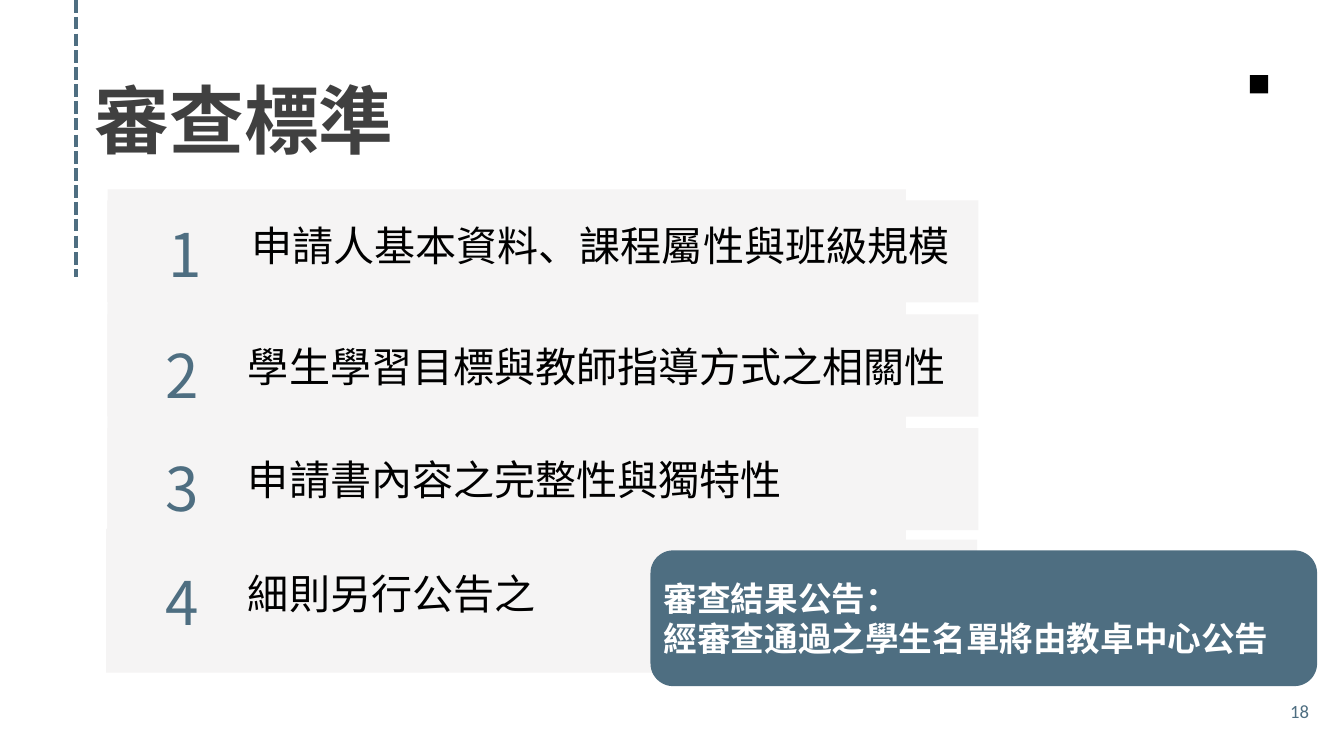
from dataclasses import dataclass

from lxml import etree
from pptx import Presentation
from pptx.dml.color import RGBColor
from pptx.enum.dml import MSO_LINE
from pptx.enum.shapes import MSO_CONNECTOR, MSO_SHAPE
from pptx.enum.text import MSO_ANCHOR, MSO_AUTO_SIZE, PP_ALIGN
from pptx.oxml.ns import qn
from pptx.util import Inches, Pt

RECTANGLE, ROUNDED = MSO_SHAPE.RECTANGLE, MSO_SHAPE.ROUNDED_RECTANGLE
STRAIGHT = MSO_CONNECTOR.STRAIGHT
SQUARE_DASH = MSO_LINE.SQUARE_DOT
MIDDLE = MSO_ANCHOR.MIDDLE
LEFT, RIGHT = PP_ALIGN.LEFT, PP_ALIGN.RIGHT
GROW = MSO_AUTO_SIZE.SHAPE_TO_FIT_TEXT

SLIDE_WIDTH, SLIDE_HEIGHT = 20, 11.25
CJK_FONT, LATIN_FONT = "Noto Sans CJK SC", "Calibri"
TEAL, PANEL_GREY, TITLE_GREY = "4E6E81", "F5F4F4", "404040"
BLACK, WHITE = "000000", "FFFFFF"

ROW_PITCH = 1.69
PANEL_LEFT, PANEL_TOP = 1.6, 2.98
NUMBER_LEFT, NUMBER_TOP = 2.51, 3.05
WORDING_LEFT, WORDING_TOP = 3.74, 3.28


@dataclass(frozen=True)
class Box:
    left: float
    top: float
    width: float
    height: float

    def emu(self) -> tuple:
        return tuple(Inches(v) for v in (self.left, self.top, self.width, self.height))


@dataclass(frozen=True)
class Style:
    size: float
    color: str
    font: str = CJK_FONT
    bold: bool = False
    align: PP_ALIGN = LEFT
    line_points: float = 0


@dataclass(frozen=True)
class Criterion:
    """A numbered row; the shifts are its offsets from the regular grid."""
    wording: str
    panel_dx: float = 0
    panel_dy: float = 0
    number_dx: float = -0.04
    wording_dx: float = -0.05
    text_dy: float = 0.11


CRITERIA = (
    Criterion("申請人基本資料、課程屬性與班級規模", number_dx=0, wording_dx=0, text_dy=0),
    Criterion("學生學習目標與教師指導方式之相關性", panel_dy=0.01),
    Criterion("申請書內容之完整性與獨特性", panel_dy=0.01),
    Criterion("細則另行公告之", panel_dx=-0.02, panel_dy=-0.02),
)
TITLE = Style(80, TITLE_GREY, bold=True)
NUMBER = Style(64.5, TEAL, line_points=90.3)
WORDING = Style(44, BLACK)
NOTICE = Style(36, WHITE, bold=True)
PAGE_NUMBER = Style(20, TEAL, font=LATIN_FONT, align=RIGHT)


def rgb(color: str) -> RGBColor:
    return RGBColor.from_string(color)


def write(frame, text: str, style: Style) -> None:
    frame.word_wrap = True
    frame.text = text
    for paragraph in frame.paragraphs:
        paragraph.alignment = style.align
        if style.line_points:
            paragraph.line_spacing = Pt(style.line_points)
        for run in paragraph.runs:
            run.font.size = Pt(style.size)
            run.font.bold = style.bold
            run.font.color.rgb = rgb(style.color)
            run.font.name = style.font
            east_asian = etree.SubElement(run.font._element, qn("a:ea"))
            east_asian.set("typeface", style.font)


def add_block(slide, box: Box, color: str, kind: MSO_SHAPE = RECTANGLE):
    block = slide.shapes.add_shape(kind, *box.emu())
    block.shadow.inherit = False
    block.fill.solid()
    block.fill.fore_color.rgb = rgb(color)
    block.line.fill.background()
    return block


def add_label(slide, box: Box, text: str, style: Style) -> None:
    """Add a text box without margins that grows with its text."""
    frame = slide.shapes.add_textbox(*box.emu()).text_frame
    frame.margin_left = frame.margin_top = frame.margin_right = frame.margin_bottom = 0
    write(frame, text, style)
    frame.auto_size = GROW


def add_dashed_rule(slide, x: float, bottom: float) -> None:
    rule = slide.shapes.add_connector(STRAIGHT, Inches(x), 0, Inches(x), Inches(bottom))
    rule.line.color.rgb = rgb(TEAL)
    rule.line.width = Pt(4.5)
    rule.line.dash_style = SQUARE_DASH
    etree.SubElement(rule._element.spPr, qn("a:effectLst"))


def add_panel(slide, row: int, criterion: Criterion) -> None:
    """Draw the wide band and the taller block that overlaps it."""
    left = PANEL_LEFT + criterion.panel_dx
    top = PANEL_TOP + row * ROW_PITCH + criterion.panel_dy
    add_block(slide, Box(left, top, 12.96, 1.52), PANEL_GREY)
    add_block(slide, Box(left, top - 0.16, 11.88, 2.14), PANEL_GREY)


def add_criterion_text(slide, row: int, criterion: Criterion) -> None:
    shift = row * ROW_PITCH + criterion.text_dy
    number_box = Box(NUMBER_LEFT + criterion.number_dx, NUMBER_TOP + shift, 0.49, 1.15)
    wording_box = Box(WORDING_LEFT + criterion.wording_dx, WORDING_TOP + shift, 10.65, 0.74)
    add_label(slide, number_box, str(row + 1), NUMBER)
    add_label(slide, wording_box, criterion.wording, WORDING)


def main() -> None:
    deck = Presentation()
    deck.slide_width, deck.slide_height = Inches(SLIDE_WIDTH), Inches(SLIDE_HEIGHT)
    slide = deck.slides.add_slide(deck.slide_layouts[6])

    add_dashed_rule(slide, 1.13, 4.12)
    add_block(slide, Box(18.6, 1.12, 0.27, 0.27), BLACK)
    add_label(slide, Box(1.41, 1.1, 12.75, 1.35), "審查標準", TITLE)

    for row, criterion in enumerate(CRITERIA):
        add_panel(slide, row, criterion)
    for row, criterion in enumerate(CRITERIA):
        add_criterion_text(slide, row, criterion)

    notice = add_block(slide, Box(9.68, 8.19, 9.92, 2.02), TEAL, ROUNDED)
    write(notice.text_frame, "審查結果公告：\n經審查通過之學生名單將由教卓中心公告", NOTICE)
    notice.text_frame.vertical_anchor = MIDDLE

    page_number = slide.shapes.add_textbox(*Box(17.25, 10.38, 2.33, 0.4).emu())
    write(page_number.text_frame, "18", PAGE_NUMBER)
    page_number.text_frame.vertical_anchor = MIDDLE

    deck.save("out.pptx")


if __name__ == "__main__":
    main()
